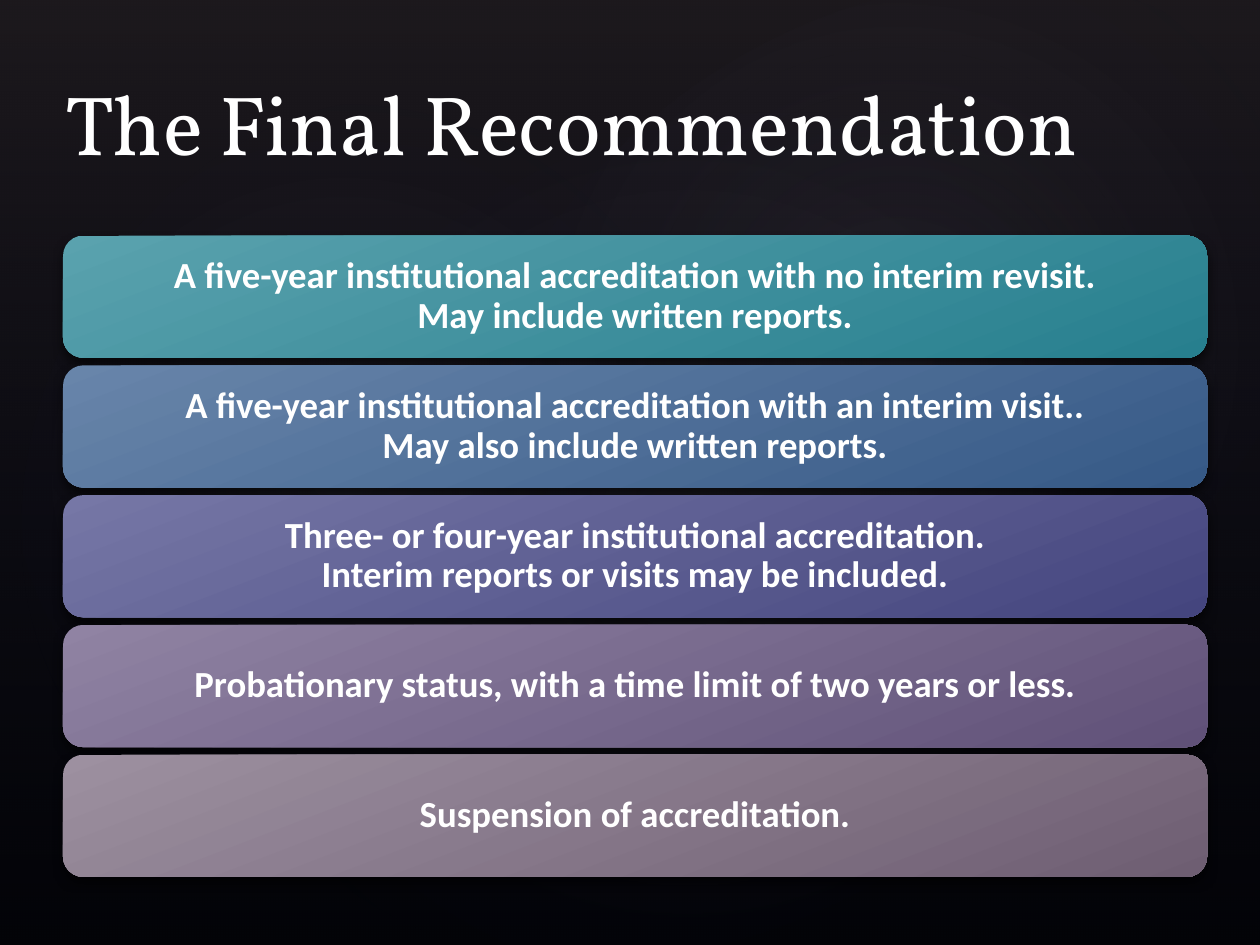
from lxml import etree
from pptx import Presentation
from pptx import util as u
from pptx.dml.color import RGBColor
from pptx.enum import shapes, text
from pptx.oxml.ns import qn

COLORS = {
    "back": "000000",
    "ink": "FFFFFF",
    "shadow": "000000",
    "veil": "504652",
    "navy": "242852",
    "glow": "C4BCC6",
}
GLOWS = [
    (1.5, 1.14, 7.92, 6.24, 328.7, 7),
    (-0.3, 1.28, 6.06, 4.9, 294.3, 8),
    (3.58, 0.13, 7.09, 5.2, 328.7, 8),
]
OUTCOMES = [
    ("5AA2AE", "277F8E", ["A five-year institutional accreditation with no interim revisit.",
                          "May include written reports."]),
    ("6885AA", "365986", ["A five-year institutional accreditation with an interim visit..",
                          "May also include written reports."]),
    ("7677A6", "44457E", ["Three- or four-year institutional accreditation.",
                          "Interim reports or visits may be included."]),
    ("9083A3", "605178", ["Probationary status, with a time limit of two years or less."]),
    ("9D90A0", "6E5E72", ["Suspension of accreditation."]),
]
BAR_TOP, BAR_PITCH = 1.87, 1.03


class SlideBuilder:
    title_font = "Vollkorn"
    body_font = "Calibri"

    def __init__(self, deck):
        self.page = deck.slides.add_slide(deck.slide_layouts[5])
        fill = self.page.background.fill
        fill.solid()
        fill.fore_color.rgb = RGBColor.from_string(COLORS["back"])

    def node(self, parent, tag, **attributes):
        return etree.SubElement(parent, qn(tag), {k: str(v) for k, v in attributes.items()})

    def color(self, parent, value, alpha=100):
        color = self.node(parent, "a:srgbClr", val=value)
        if alpha < 100:
            self.node(color, "a:alpha", val=alpha * 1000)

    def gradient(self, shape, stops, angle=None):
        shape.fill.background()
        properties = shape.element.spPr
        fill = etree.Element(qn("a:gradFill"), rotWithShape="1")
        stop_list = self.node(fill, "a:gsLst")
        for position, value, alpha in stops:
            stop = self.node(stop_list, "a:gs", pos=position * 1000)
            self.color(stop, value, alpha)
        if angle is None:
            radial = etree.SubElement(fill, qn("a:path"), {"path": "circle"})
            self.node(radial, "a:fillToRect", l=50000, t=50000, r=50000, b=50000)
        else:
            self.node(fill, "a:lin", ang=angle * 60000, scaled=0)
        properties.replace(properties.find(qn("a:noFill")), fill)

    def shape(self, kind, left, top, width, height, stops, angle=None):
        shape = self.page.shapes.add_shape(
            kind, u.Inches(left), u.Inches(top), u.Inches(width), u.Inches(height))
        shape.shadow.inherit = False
        shape.line.fill.background()
        self.gradient(shape, stops, angle)
        return shape

    def veil(self):
        self.shape(shapes.MSO_SHAPE.RECTANGLE, 0, 0, 10, 7.5,
                   [(0, COLORS["veil"], 36), (100, COLORS["navy"], 10)], 90)

    def glow(self, left, top, width, height, rotation, alpha):
        glow = self.shape(shapes.MSO_SHAPE.OVAL, left, top, width, height,
                          [(0, COLORS["glow"], alpha), (58, COLORS["navy"], 0)])
        glow.rotation = rotation

    def add_span(self, para, words, size, font, bold=False):
        span = para.add_run()
        span.text = words
        span.font.size = u.Pt(size)
        span.font.name = font
        span.font.bold = bold
        span.font.color.rgb = RGBColor.from_string(COLORS["ink"])

    def title(self, words):
        title = self.page.shapes.title
        title.left, title.top = u.Inches(0.42), u.Inches(0.42)
        title.width, title.height = u.Inches(9.08), u.Inches(1)
        frame = title.text_frame
        frame.vertical_anchor = text.MSO_ANCHOR.BOTTOM
        frame.auto_size = text.MSO_AUTO_SIZE.NONE
        para = frame.paragraphs[0]
        para.alignment = text.PP_ALIGN.LEFT
        self.add_span(para, words, 48, self.title_font)
        self.page.shapes.element.append(title.element)

    def bar(self, top, light, dark, lines):
        bar = self.shape(shapes.MSO_SHAPE.ROUNDED_RECTANGLE, 0.5, top, 9.08, 0.97,
                         [(0, light, 100), (100, dark, 100)], 69)
        effects = bar.element.spPr.find(qn("a:effectLst"))
        shadow = self.node(effects, "a:outerShdw", blurRad=u.Pt(6), dist=u.Pt(3),
                           dir=90 * 60000, rotWithShape=0)
        self.color(shadow, COLORS["shadow"], 60)
        frame = bar.text_frame
        frame.word_wrap = True
        frame.vertical_anchor = text.MSO_ANCHOR.MIDDLE
        frame.margin_left = frame.margin_right = u.Inches(0.09)
        frame.margin_top = frame.margin_bottom = u.Inches(0.09)
        para = frame.paragraphs[0]
        para.alignment = text.PP_ALIGN.CENTER
        para.line_spacing = 0.9
        for index, line in enumerate(lines):
            if index:
                para.add_line_break()
            self.add_span(para, line, 21, self.body_font, bold=True)


def main():
    deck = Presentation()
    deck.slide_width, deck.slide_height = u.Inches(10), u.Inches(7.5)
    builder = SlideBuilder(deck)
    builder.veil()
    for glow in GLOWS:
        builder.glow(*glow)
    builder.title("The Final Recommendation")
    for index, (light, dark, lines) in enumerate(OUTCOMES):
        builder.bar(BAR_TOP + index * BAR_PITCH, light, dark, lines)
    deck.save("out.pptx")


if __name__ == "__main__":
    main()
